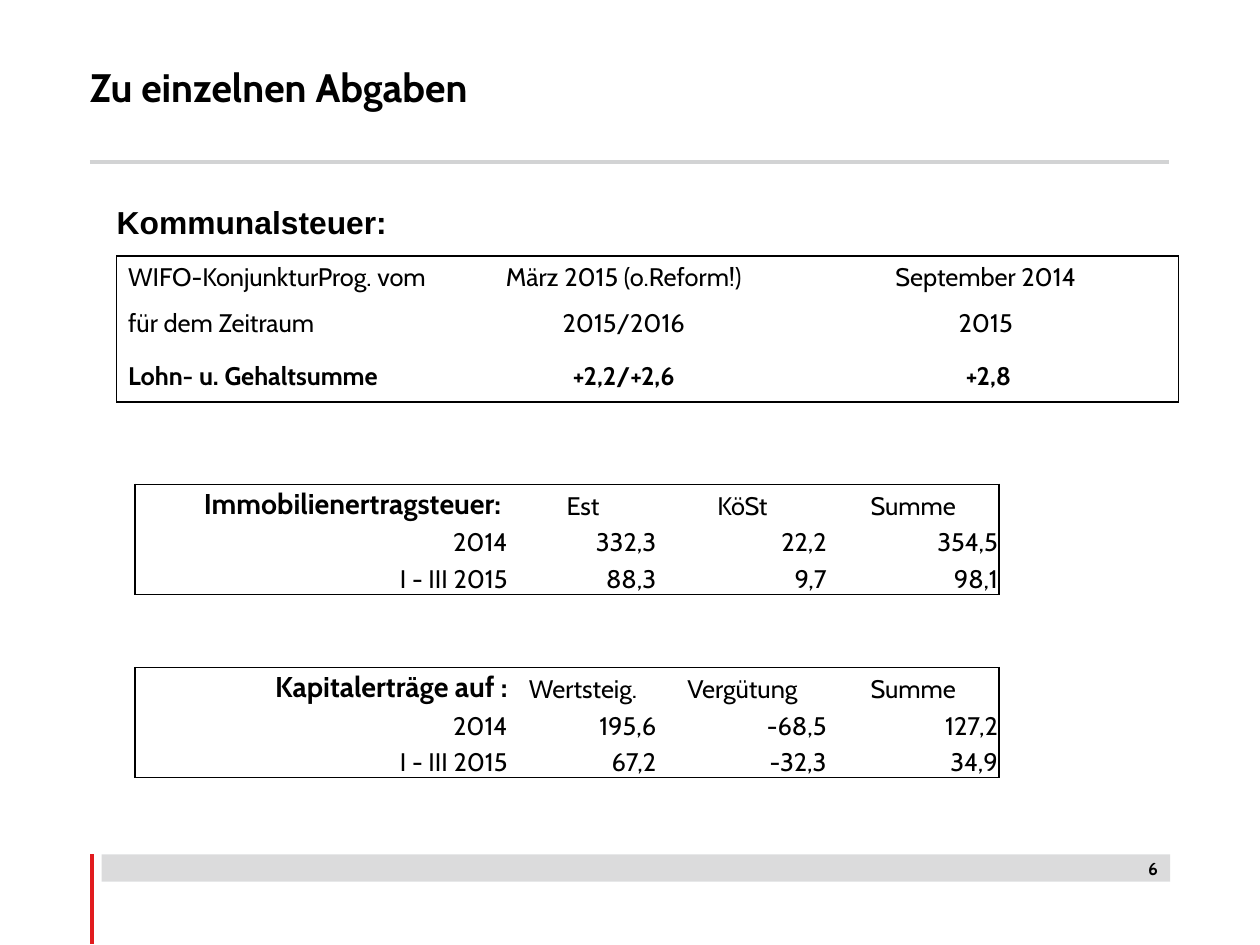
from lxml import etree
from pptx import Presentation
from pptx.dml.color import RGBColor
from pptx.enum import shapes, text
from pptx.oxml import ns
from pptx.util import Pt

COLORS = {"ink": "000000", "rule": "D2D3D4", "accent": "E11B1E"}
LEFT, CENTER, RIGHT = text.PP_ALIGN.LEFT, text.PP_ALIGN.CENTER, text.PP_ALIGN.RIGHT
TOP, MIDDLE, BOTTOM = text.MSO_ANCHOR.TOP, text.MSO_ANCHOR.MIDDLE, text.MSO_ANCHOR.BOTTOM

FORECAST = [
    ["WIFO-KonjunkturProg. vom", "März 2015 (o.Reform!)", "September 2014"],
    ["für dem Zeitraum", "2015/2016", "2015"],
    ["Lohn- u. Gehaltsumme", "+2,2/+2,6", " +2,8"],
]
REVENUE = [
    ["Immobilienertragsteuer: ", "Est", "KöSt", "Summe"],
    ["2014", "332,3", "22,2", "354,5"],
    ["I - III 2015", "88,3", "9,7", "98,1"],
    [""] * 4,
    [""] * 4,
    ["Kapitalerträge auf :", "Wertsteig.", "Vergütung", "Summe"],
    ["2014", "195,6", "-68,5", "127,2"],
    ["I - III 2015", "67,2", "-32,3", "34,9"],
]
HEADER_ROWS = (0, 5)


def set_values(target, values):
    """Set every named attribute of the target."""
    for name, value in values.items():
        setattr(target, name, value)


def write(para, wording, align=LEFT, size=16, bold=False, font="Cabin"):
    """Write one formatted span into a paragraph."""
    para.alignment = align
    span = para.add_run()
    span.text = wording
    set_values(span.font, {"name": font, "size": Pt(size), "bold": bold})
    span.font.color.rgb = RGBColor.from_string(COLORS["ink"])


def set_frame(frame, inset, anchor=TOP):
    """Give a text frame wrapping, an anchor and insets twice as wide as high."""
    set_values(frame, dict.fromkeys(("margin_top", "margin_bottom"), Pt(inset)))
    set_values(frame, dict.fromkeys(("margin_left", "margin_right"), Pt(2 * inset)))
    set_values(frame, {"word_wrap": True, "vertical_anchor": anchor})


def add_label(page, box, wording, inset=0, **style):
    """Add a text box holding one line."""
    frame = page.shapes.add_textbox(*map(Pt, box)).text_frame
    set_frame(frame, inset)
    write(frame.paragraphs[0], wording, **style)


def add_rule(page, box, color):
    """Draw a straight rule across the given box."""
    left, top, width, height = box
    ends = map(Pt, (left, top, left + width, top + height))
    rule = page.shapes.add_connector(shapes.MSO_CONNECTOR.STRAIGHT, *ends)
    rule.line.width = Pt(2.84)
    rule.line.color.rgb = RGBColor.from_string(COLORS[color])
    etree.SubElement(rule._element.spPr, ns.qn("a:effectLst"))


def add_heading(page, box):
    """Place the title in the box, with a rule along its bottom edge."""
    left, top, width, height = box
    title = page.shapes.title
    place = {"left": left, "top": top, "width": 524, "height": 47}
    set_values(title, {name: Pt(value) for name, value in place.items()})
    set_frame(title.text_frame, 0, MIDDLE)
    write(title.text_frame.paragraphs[0], "Zu einzelnen Abgaben", size=25, bold=True)
    add_rule(page, (left, top + height, width, 0), "rule")


def add_footer(page, box):
    """Place the accent rule, grey bar and page number in the box."""
    left, top, width, height = box
    add_rule(page, (left + 1.2, top, 0, height), "accent")
    bar = page.shapes.add_shape(
        shapes.MSO_SHAPE.RECTANGLE, Pt(left + 7.2), Pt(top), Pt(width - 7.2), Pt(17.2))
    bar.shadow.inherit = False
    bar.fill.solid()
    bar.fill.fore_color.rgb = RGBColor.from_string(COLORS["rule"])
    tint = bar._element.spPr.find(".//" + ns.qn("a:srgbClr"))
    etree.SubElement(tint, ns.qn("a:alpha"), val="80000")
    bar.line.fill.background()
    number_box = (left + width - 51, top - 1.2, 50.4, 27.4)
    add_label(page, number_box, "6", inset=3.6, align=RIGHT, size=11, bold=True)


def frame_block(cell, rows, row, column):
    """Draw cell edges only where a filled block of rows ends."""
    def is_filled(r, c):
        return 0 <= r < len(rows) and 0 <= c < len(rows[r]) and rows[r][c] != ""

    neighbors = {"L": (0, -1), "R": (0, 1), "T": (-1, 0), "B": (1, 0)}
    cell.fill.background()
    properties = cell._tc.get_or_add_tcPr()
    for place, (side, (down, across)) in enumerate(neighbors.items()):
        edge = etree.Element(ns.qn("a:ln" + side), w=str(Pt(1)))
        if is_filled(row, column) != is_filled(row + down, column + across):
            fill = etree.SubElement(edge, ns.qn("a:solidFill"))
            etree.SubElement(fill, ns.qn("a:srgbClr"), val=COLORS["ink"])
        else:
            etree.SubElement(edge, ns.qn("a:noFill"))
        properties.insert(place, edge)


def add_framed_table(page, box, rows, widths, heights, style_cell):
    """Add a table whose filled blocks are framed, styled cell by cell."""
    table = page.shapes.add_table(len(rows), len(widths), *map(Pt, box)).table
    set_values(table, {"first_row": False, "horz_banding": False})
    for column, width in zip(table.columns, widths):
        column.width = Pt(width)
    for line, height in zip(table.rows, heights):
        line.height = Pt(height)
    for row, wordings in enumerate(rows):
        for column, wording in enumerate(wordings):
            cell = table.cell(row, column)
            style = style_cell(cell, row, column)
            if wording:
                write(cell.text_frame.paragraphs[0], wording, **style)
            frame_block(cell, rows, row, column)


def add_forecast(page, box):
    """Place the municipal tax heading and forecast table in the box."""
    left, top, width, height = box

    def style_cell(cell, row, column):
        return {"align": CENTER if column else LEFT, "bold": row == 2}

    add_label(page, (left, top, width, 23), "Kommunalsteuer:", size=20, bold=True, font="Arial")
    add_framed_table(page, (left, top + 33.8, width, height - 33.8), FORECAST,
                     (213, 213, width - 426), (29.5, 33, 29.5), style_cell)


def add_revenue(page, box):
    """Place the two revenue blocks in the box as one table."""
    def style_cell(cell, row, column):
        sides = ("margin_left", "margin_top", "margin_right")
        set_values(cell, dict.fromkeys(sides, Pt(0.7)))
        set_values(cell, {"margin_bottom": 0, "vertical_anchor": BOTTOM})
        is_header = row in HEADER_ROWS
        is_name = is_header and column == 0
        return {"align": CENTER if is_header and column else RIGHT,
                "size": 18 if is_name else 16, "bold": is_name}

    heights = [23.5 if row in HEADER_ROWS else 23 for row in range(len(REVENUE))]
    add_framed_table(page, box, REVENUE, (235.5, 93.6, 107.3, 107.9), heights, style_cell)


def main():
    """Build and save the deck."""
    deck = Presentation()
    set_values(deck, {"slide_width": Pt(793.75), "slide_height": Pt(595.25)})
    page = deck.slides.add_slide(deck.slide_layouts[5])
    add_heading(page, (56.7, 31, 680, 71))
    add_footer(page, (56.8, 538.2, 680.4, 56.2))
    add_forecast(page, (73.5, 127.5, 669, 125.8))
    add_revenue(page, (85, 305, 544.3, 185))
    deck.save("out.pptx")


if __name__ == "__main__":
    main()
